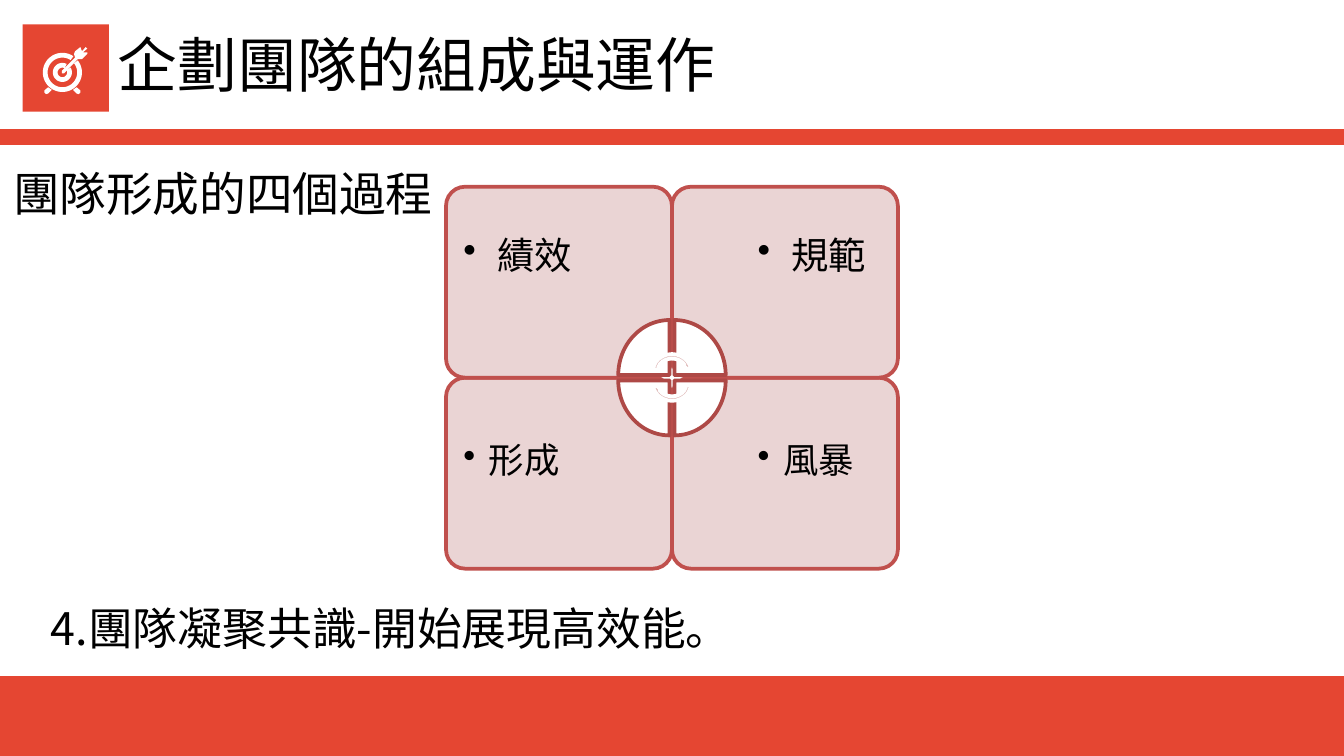
from math import cos, radians, sin

from lxml import etree
from pptx import Presentation
from pptx.dml.color import RGBColor
from pptx.enum.shapes import MSO_SHAPE
from pptx.enum.text import MSO_ANCHOR, PP_ALIGN
from pptx.oxml.ns import qn
from pptx.util import Cm, Pt

RECTANGLE = MSO_SHAPE.RECTANGLE
CARD = MSO_SHAPE.ROUNDED_RECTANGLE
WEDGE = MSO_SHAPE.PIE_WEDGE
CYCLE_ARROW = MSO_SHAPE.CIRCULAR_ARROW
MIDDLE, TOP = MSO_ANCHOR.MIDDLE, MSO_ANCHOR.TOP

RED, WHITE, BLACK = "E54632", "FFFFFF", "000000"
CARD_FILL, CARD_LINE = "E8D0D0", "C0504D"
WEDGE_LINE, ARROW_FILL = "AE4946", "DCB3B2"
CJK_FONT, CARD_FONT = "Noto Sans CJK JP", "Arial"

# All lengths are in centimetres.
SLIDE_WIDTH, SLIDE_HEIGHT = 25.4, 14.29
BANDS = [(0, 12.78, SLIDE_WIDTH, 1.51), (0, 2.44, SLIDE_WIDTH, 0.3)]
ICON_TILE = (0.43, 0.46, 1.63, 1.65)

# text, box, size, anchor, side inset, top inset
TEXTS = [
    ("企劃團隊的組成與運作", (1.98, -0.03, 11.99, 2.46), 32, MIDDLE, 0.25, 0.25),
    ("團隊形成的四個過程", (0, 2.74, 9.65, 1.83), 25, MIDDLE, 0.25, 0.25),
    ("4.團隊凝聚共識-開始展現高效能。", (0.71, 11.23, 23.57, 1.27), 24, TOP, 0.25, 0.13),
]

CENTER_X, CENTER_Y = 12.7, 7.14
CARD_WIDTH, CARD_HEIGHT = 4.27, 3.61
LABEL_WIDTH, LABEL_HEIGHT = 2.82, 2.57
LABEL_X = {-1: 8.51, 1: 14.07}
# vertical side -> label top, top inset, size, indent
LABEL_ROWS = {-1: (3.61, 1.22, 20, 0.64), 1: (8.13, 0.25, 19, 0.48)}
WEDGE_WIDTH, WEDGE_HEIGHT = 0.97, 1.04
WEDGE_DX, WEDGE_DY = 0.53, 0.57
# label, horizontal side, vertical side, wedge rotation
STAGES = [("風暴", 1, 1, 180), ("形成", -1, 1, 270),
          ("規範", 1, -1, 90), ("績效", -1, -1, 0)]
ARROWS = [(6.65, 0), (6.93, 180)]
ARROW_WIDTH, ARROW_HEIGHT = 0.79, 0.69

TARGET_X, TARGET_Y = 1.18, 1.37
# outer radius, inner radius, first angle, last angle
RINGS = [(0.37, 0.28, 56, 398), (0.18, 0.09, 63, 391)]
FOOT = [(0.91, 1.65), (0.84, 1.71), (0.84, 1.75), (0.87, 1.78),
        (0.91, 1.77), (0.98, 1.7)]
DART = [(1.52, 0.89), (1.42, 0.97), (1.4, 1.02), (1.42, 1.09), (1.17, 1.34),
        (1.17, 1.39), (1.21, 1.39), (1.47, 1.12), (1.55, 1.12), (1.65, 1.02),
        (1.65, 0.99), (1.57, 0.99), (1.65, 0.92), (1.62, 0.89), (1.55, 0.97)]


def color(hex_string):
    return RGBColor.from_string(hex_string)


def paint(shape, fill, line=None):
    shape.shadow.inherit = False
    shape.fill.solid()
    shape.fill.fore_color.rgb = color(fill)
    if line:
        shape.line.color.rgb = color(line)
        shape.line.width = Pt(2)
    else:
        shape.line.fill.background()
    return shape


def add_shape(slide, kind, box, fill, line=None, rotation=0):
    shape = slide.shapes.add_shape(kind, *map(Cm, box))
    shape.rotation = rotation
    return paint(shape, fill, line)


def add_outline(slide, points):
    """Draw a closed white polygon through the points."""
    corners = [(Cm(x), Cm(y)) for x, y in points]
    builder = slide.shapes.build_freeform(*corners[0])
    builder.add_line_segments(corners[1:], close=True)
    return paint(builder.convert_to_shape(), WHITE)


def add_text(slide, text, box, size, anchor, inset, top_inset, font=CJK_FONT):
    frame = slide.shapes.add_textbox(*map(Cm, box)).text_frame
    frame.word_wrap = True
    frame.vertical_anchor = anchor
    frame.margin_left = frame.margin_right = Cm(inset)
    frame.margin_top, frame.margin_bottom = Cm(top_inset), Cm(min(inset, top_inset))
    frame.text = text
    paragraph = frame.paragraphs[0]
    paragraph.alignment = PP_ALIGN.LEFT
    run = paragraph.runs[0]
    run.font.size = Pt(size)
    run.font.name = font
    run.font.color.rgb = color(BLACK)
    east_asian = etree.SubElement(run.font._element, qn("a:ea"))
    east_asian.set("typeface", font)
    return paragraph


def add_bullet(paragraph, indent):
    paragraph.line_spacing = 0.9
    paragraph.space_after = Pt(3)
    properties = paragraph._p.get_or_add_pPr()
    properties.set("marL", str(Cm(indent)))
    properties.set("indent", str(-Cm(indent)))
    etree.SubElement(properties, qn("a:buChar")).set("char", "•")


def ring_points(outer, inner, first, last, steps=48):
    angles = [radians(first + (last - first) * i / steps) for i in range(steps + 1)]
    arcs = [(outer, a) for a in angles] + [(inner, a) for a in reversed(angles)]
    return [(TARGET_X + r * cos(a), TARGET_Y - r * sin(a)) for r, a in arcs]


def add_target_icon(slide):
    add_shape(slide, RECTANGLE, ICON_TILE, RED)
    for ring in RINGS:
        add_outline(slide, ring_points(*ring))
    add_outline(slide, FOOT)
    add_outline(slide, [(2 * TARGET_X - x, y) for x, y in FOOT])
    add_outline(slide, DART)


def add_stage_card(slide, label, side_x, side_y):
    left = CENTER_X + (side_x - 1) / 2 * CARD_WIDTH
    top = CENTER_Y + (side_y - 1) / 2 * CARD_HEIGHT
    card = add_shape(slide, CARD, (left, top, CARD_WIDTH, CARD_HEIGHT),
                     CARD_FILL, CARD_LINE)
    card.adjustments[0] = 0.1
    fill_color = card._element.spPr.find(qn("a:solidFill"))[0]
    etree.SubElement(fill_color, qn("a:alpha")).set("val", "90000")

    label_top, top_inset, size, indent = LABEL_ROWS[side_y]
    box = (LABEL_X[side_x], label_top, LABEL_WIDTH, LABEL_HEIGHT)
    paragraph = add_text(slide, label, box, size, TOP, 0.25, top_inset, CARD_FONT)
    add_bullet(paragraph, indent)


def add_wedge(slide, side_x, side_y, rotation):
    width, height = WEDGE_WIDTH, WEDGE_HEIGHT
    if rotation % 180:
        width, height = height, width
    box = (CENTER_X + side_x * WEDGE_DX - width / 2,
           CENTER_Y + side_y * WEDGE_DY - height / 2, width, height)
    add_shape(slide, WEDGE, box, WHITE, WEDGE_LINE, rotation)


def main():
    presentation = Presentation()
    presentation.slide_width = Cm(SLIDE_WIDTH)
    presentation.slide_height = Cm(SLIDE_HEIGHT)
    slide = presentation.slides.add_slide(presentation.slide_layouts[6])

    for band in BANDS:
        add_shape(slide, RECTANGLE, band, RED)
    add_target_icon(slide)
    for text in TEXTS:
        add_text(slide, *text)
    for label, side_x, side_y, _ in STAGES:
        add_stage_card(slide, label, side_x, side_y)
    for _, side_x, side_y, rotation in STAGES:
        add_wedge(slide, side_x, side_y, rotation)
    for top, rotation in ARROWS:
        box = (CENTER_X - ARROW_WIDTH / 2, top, ARROW_WIDTH, ARROW_HEIGHT)
        add_shape(slide, CYCLE_ARROW, box, ARROW_FILL, WHITE, rotation)

    presentation.save("out.pptx")


if __name__ == "__main__":
    main()
